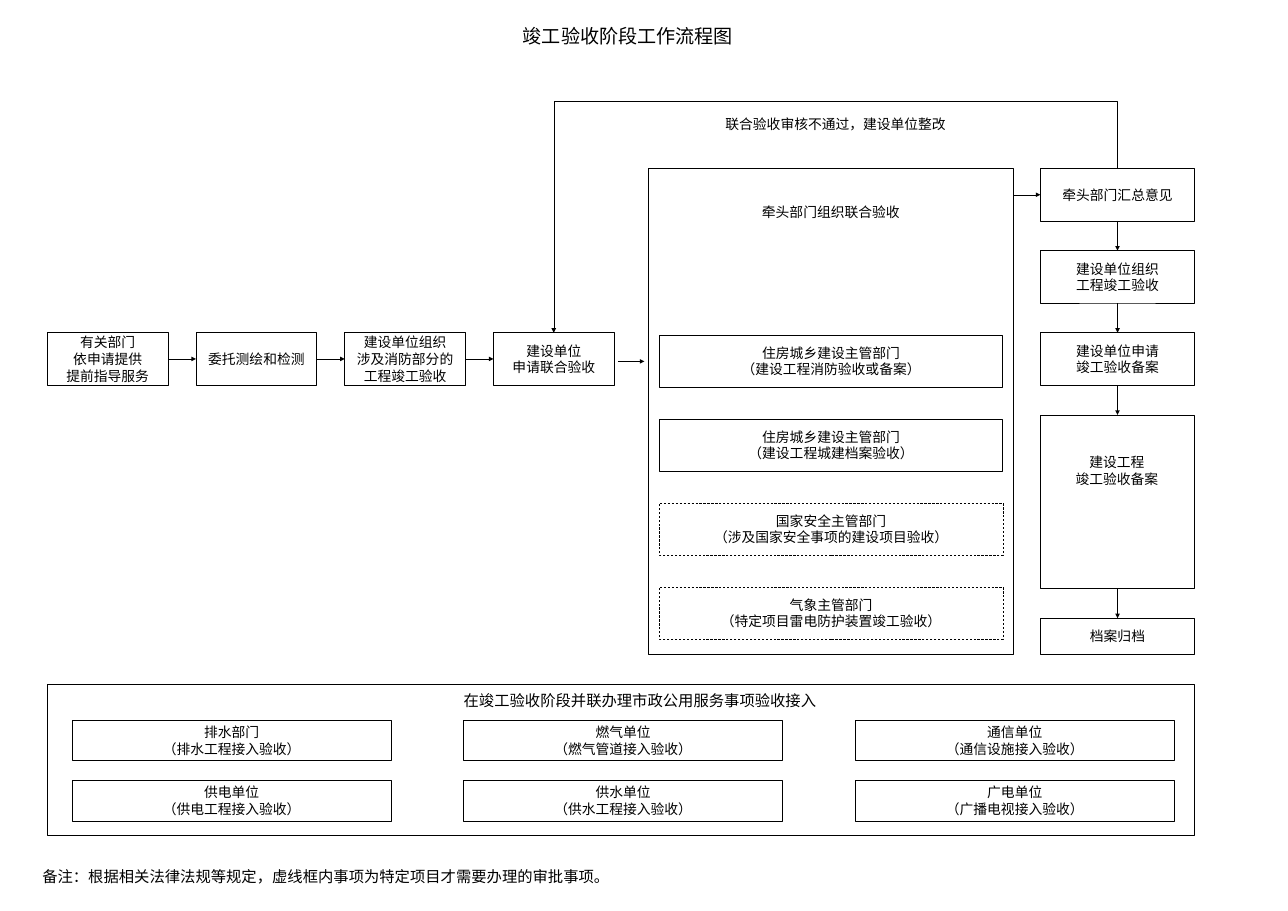
from pptx import Presentation
from pptx.dml.color import RGBColor
from pptx.enum.dml import MSO_LINE
from pptx.enum.shapes import MSO_CONNECTOR, MSO_SHAPE
from pptx.enum.text import MSO_ANCHOR, MSO_AUTO_SIZE, PP_ALIGN
from pptx.oxml.ns import qn
from pptx.util import Pt
from lxml import etree

RECTANGLE = MSO_SHAPE.RECTANGLE
STRAIGHT, ELBOW = MSO_CONNECTOR.STRAIGHT, MSO_CONNECTOR.ELBOW
DASH = MSO_LINE.DASH
MIDDLE, TOP_ANCHOR = MSO_ANCHOR.MIDDLE, MSO_ANCHOR.TOP
GROW, FIXED = MSO_AUTO_SIZE.SHAPE_TO_FIT_TEXT, MSO_AUTO_SIZE.NONE
CENTER, LEFT_ALIGN = PP_ALIGN.CENTER, PP_ALIGN.LEFT
BOTTOM_SIDE, LEFT_SIDE, RIGHT_SIDE, TOP_SIDE = 2, 1, 3, 0

FONT = "Noto Sans CJK SC"
BLACK, WHITE = "000000", "FFFFFF"
BOX_HEIGHT = 68.4
ROW_TOP = 434.9

PREPARATION_STEPS = [
    "有关部门\n依申请提供\n提前指导服务",
    "委托测绘和检测",
    "建设单位组织\n涉及消防部分的工程竣工验收",
    "建设单位\n申请联合验收",
]
DEPARTMENTS = [
    ("住房城乡建设主管部门\n（建设工程消防验收或备案）", False),
    ("住房城乡建设主管部门\n（建设工程城建档案验收）", False),
    ("国家安全主管部门\n（涉及国家安全事项的建设项目验收）", True),
    ("气象主管部门\n（特定项目雷电防护装置竣工验收）", True),
]
COMPLETION_STEPS = [
    ("牵头部门汇总意见", 220.3, BOX_HEIGHT),
    ("建设单位组织\n工程竣工验收", 327.6, BOX_HEIGHT),
    ("建设单位申请\n竣工验收备案", ROW_TOP, BOX_HEIGHT),
    ("", 542.2, 226.8),
    ("档案归档", 807.9, 46.8),
]
UTILITIES = [
    "排水部门\n（排水工程接入验收）",
    "燃气单位\n（燃气管道接入验收）",
    "通信单位\n（通信设施接入验收）",
    "供电单位\n（供电工程接入验收）",
    "供水单位\n（供水工程接入验收）",
    "广电单位\n（广播电视接入验收）",
]


def color(hex_value):
    """Return the colour for a hex string."""
    return RGBColor.from_string(hex_value)


def apply_format(target, values):
    """Set every attribute in values on the target."""
    for name, value in values.items():
        setattr(target, name, value)


def write_text(shape, text, size, frame_format, alignment=CENTER, pitch=1.2):
    """Write one paragraph per line of text into a shape."""
    frame = shape.text_frame
    apply_format(frame, {"word_wrap": True, **frame_format})
    frame.text = text
    for paragraph in frame.paragraphs:
        apply_format(paragraph, {"alignment": alignment, "line_spacing": Pt(size * pitch)})
        for run in paragraph.runs:
            apply_format(run.font, {"size": Pt(size), "name": FONT})
            run.font.color.rgb = color(BLACK)
            latin = run.font._element.find(qn("a:latin"))
            east_asian = etree.Element(qn("a:ea"), typeface=FONT)
            latin.addnext(east_asian)


def add_box(slide, left, top, width, height, text="", line=BLACK, dashed=False):
    """Add an unfilled rectangle with centred text."""
    shape = slide.shapes.add_shape(RECTANGLE, Pt(left), Pt(top), Pt(width), Pt(height))
    shape.shadow.inherit = False
    shape.fill.background()
    shape.line.color.rgb = color(line)
    outline = {"width": Pt(0), "dash_style": DASH} if dashed else {"width": Pt(1)}
    apply_format(shape.line, outline)
    if text:
        write_text(shape, text, 18, {"vertical_anchor": MIDDLE, "auto_size": FIXED})
    return shape


def add_label(slide, left, top, width, height, text, size, **text_options):
    """Add a free text label."""
    shape = slide.shapes.add_textbox(Pt(left), Pt(top), Pt(width), Pt(height))
    write_text(shape, text, size, {"vertical_anchor": TOP_ANCHOR, "auto_size": GROW},
               **text_options)


def add_arrow(slide, start=(0, 0), end=(0, 0), begin=None, finish=None, kind=STRAIGHT):
    """Add an arrow between points or (shape, side) joints."""
    connector = slide.shapes.add_connector(kind, *map(Pt, (*start, *end)))
    if begin:
        connector.begin_connect(*begin)
    if finish:
        connector.end_connect(*finish)
    connector.line.color.rgb = color(BLACK)
    connector.line.width = Pt(0.5)
    properties = connector._element.spPr
    etree.SubElement(properties.find(qn("a:ln")), qn("a:tailEnd"), type="triangle")
    etree.SubElement(properties, qn("a:effectLst"))
    return connector


def add_return_arrow(slide, begin, finish, rise):
    """Add an elbow arrow that leaves upwards by rise and comes down on its target."""
    connector = add_arrow(slide, begin=begin, finish=finish, kind=ELBOW)
    width, height = connector.width, connector.height
    apply_format(connector, {
        "left": connector.left + (width - height) // 2,
        "top": connector.top + (height - width) // 2,
        "width": height,
        "height": width,
        "rotation": 270,
    })
    properties = connector._element.spPr
    transform = properties.find(qn("a:xfrm"))
    transform.set("flipH", "1")
    transform.set("flipV", "1")
    geometry = properties.find(qn("a:prstGeom"))
    adjustments = geometry.find(qn("a:avLst"))
    if adjustments is None:
        adjustments = etree.SubElement(geometry, qn("a:avLst"))
    ratio = round(-100000 * Pt(rise) / height)
    etree.SubElement(adjustments, qn("a:gd"), name="adj1", fmla=f"val {ratio}")


def add_chain(slide, boxes, from_side, to_side):
    """Join each box to the next with an arrow."""
    for box, following in zip(boxes, boxes[1:]):
        add_arrow(slide, begin=(box, from_side), finish=(following, to_side))


def add_joint_acceptance(slide):
    """Add the joint acceptance frame with its departments."""
    add_box(slide, 847.4, 220.3, 477.4, 634.3)
    add_box(slide, 948.2, 259.2, 275.8, 36, "牵头部门组织联合验收", line=WHITE)
    for index, (text, dashed) in enumerate(DEPARTMENTS):
        add_box(slide, 861.8, 437.8 + 109.7 * index, 449.3, BOX_HEIGHT, text, dashed=dashed)


def add_utilities(slide):
    """Add the public utility frame with its grid of units."""
    add_box(slide, 61.9, 894.2, 1499, 197.3)
    add_label(slide, 367.2, 900, 938.9, 31.7,
              "在竣工验收阶段并联办理市政公用服务事项验收接入", 20)
    for index, text in enumerate(UTILITIES):
        row, column = divmod(index, 3)
        add_box(slide, 94.3 + 511.9 * column, 941 + 78.5 * row, 416.9, 53.3, text)


def main():
    """Build the completion acceptance flowchart."""
    presentation = Presentation()
    apply_format(presentation, {"slide_width": Pt(1683.76), "slide_height": Pt(1190.5)})
    slide = presentation.slides.add_slide(presentation.slide_layouts[6])

    add_label(slide, 457.9, 28.8, 725.8, 37.4, "竣工验收阶段工作流程图", 25)
    preparation = [add_box(slide, 61.9 + 194.4 * index, ROW_TOP, 157.7, BOX_HEIGHT, text)
                   for index, text in enumerate(PREPARATION_STEPS)]
    add_joint_acceptance(slide)
    completion = [add_box(slide, 1360.1, top, 201.6, height, text)
                  for text, top, height in COMPLETION_STEPS]
    add_label(slide, 1365.1, 589.7, 190.1, 51.1, "建设工程\n竣工验收备案", 18)

    add_chain(slide, preparation, RIGHT_SIDE, LEFT_SIDE)
    add_chain(slide, completion, BOTTOM_SIDE, TOP_SIDE)
    add_arrow(slide, start=(807.8, 472.3), end=(842.4, 472.3))
    add_arrow(slide, start=(1324.8, 254.5), finish=(completion[0], LEFT_SIDE))
    add_return_arrow(slide, (completion[0], TOP_SIDE), (preparation[-1], TOP_SIDE), 87.8)
    add_label(slide, 729.4, 148.3, 725.8, 28.8, "联合验收审核不通过，建设单位整改", 18)

    add_utilities(slide)
    add_label(slide, 48.2, 1118.2, 915.8, 43.2,
              "备注：根据相关法律法规等规定，虚线框内事项为特定项目才需要办理的审批事项。",
              20, alignment=LEFT_ALIGN, pitch=1.8)
    presentation.save("out.pptx")


if __name__ == "__main__":
    main()
